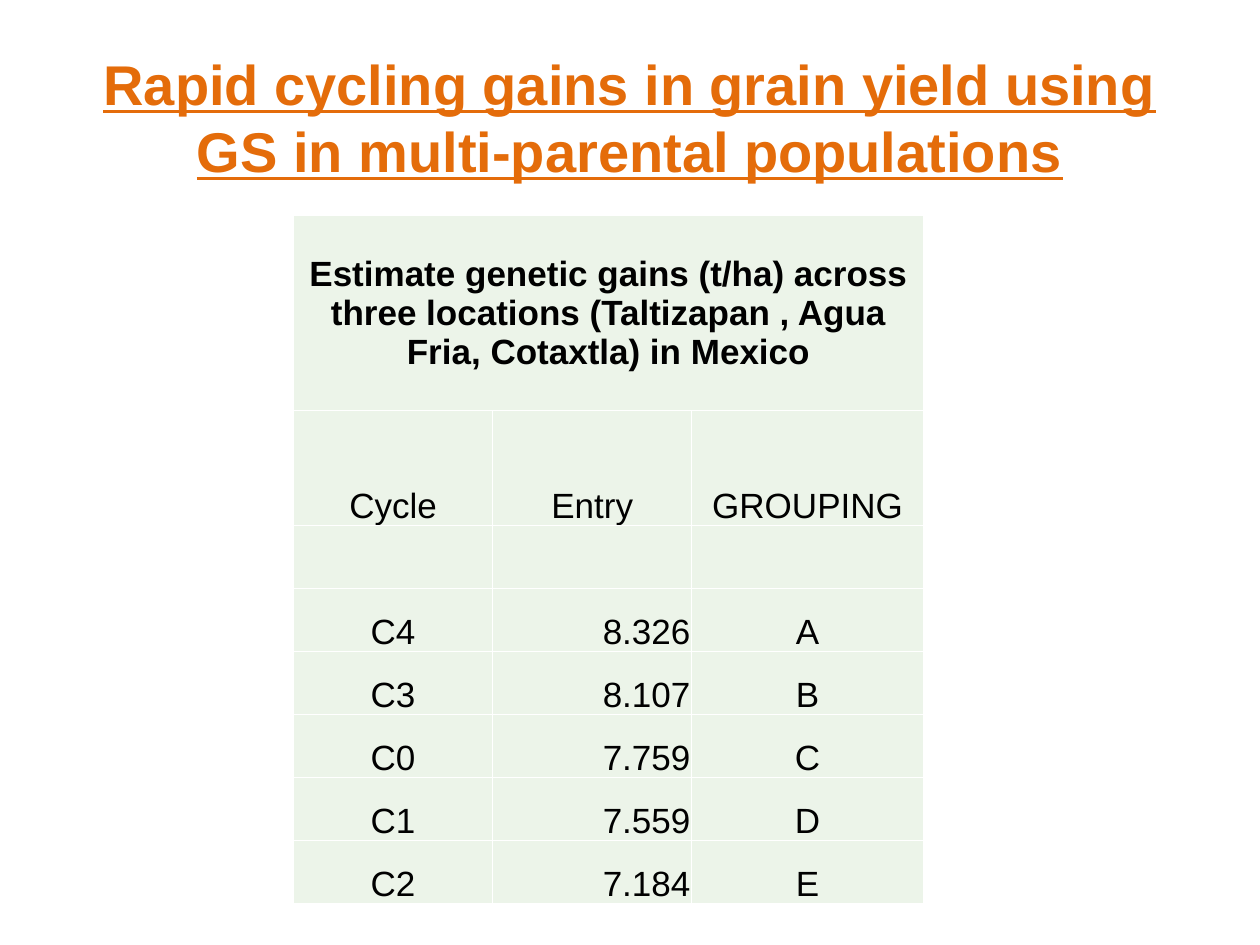
from lxml import etree
from pptx import Presentation
from pptx import util as u
from pptx.dml.color import RGBColor
from pptx.enum import text
from pptx.oxml.ns import qn

COLORS = {"title": "E46C0A", "ink": "000000", "cell": "ECF4E9", "border": "FFFFFF"}
FONT = "Arial"
TITLE = "Rapid cycling gains in grain yield using GS in multi-parental populations"
CAPTION = ("Estimate genetic gains (t/ha) across three locations "
           "(Taltizapan , Agua Fria, Cotaxtla) in Mexico")
HEADINGS = ("Cycle", "Entry", "GROUPING")
GAINS = [
    ("C4", "8.326", "A"),
    ("C3", "8.107", "B"),
    ("C0", "7.759", "C"),
    ("C1", "7.559", "D"),
    ("C2", "7.184", "E"),
]
COLUMN_WIDTHS = (1.58, 1.58, 1.84)
ROW_HEIGHTS = (1.55, 0.91) + (0.5,) * 6


def write_paragraph(paragraph, content, size, color, alignment, bold=False):
    """Fill a paragraph and set its font and alignment."""
    paragraph.text = content
    paragraph.alignment = alignment
    paragraph.font.name = FONT
    paragraph.font.size = u.Pt(size)
    paragraph.font.bold = bold
    paragraph.font.color.rgb = RGBColor.from_string(COLORS[color])


def add_title(slide):
    """Add the underlined slide title."""
    box = slide.shapes.add_textbox(u.Inches(0.5), u.Inches(0.3), u.Inches(9), u.Inches(1.25))
    frame = box.text_frame
    frame.word_wrap = True
    frame.vertical_anchor = text.MSO_ANCHOR.MIDDLE
    paragraph = frame.paragraphs[0]
    write_paragraph(paragraph, TITLE, 32, "title", text.PP_ALIGN.CENTER, bold=True)
    paragraph.font.underline = True


def set_borders(cell):
    """Draw a thin border on all four sides of a cell."""
    properties = cell._tc.get_or_add_tcPr()
    for position, side in enumerate(("lnL", "lnR", "lnT", "lnB")):
        line = etree.Element(qn(f"a:{side}"), w=str(u.Pt(1)))
        fill = etree.SubElement(line, qn("a:solidFill"))
        etree.SubElement(fill, qn("a:srgbClr"), val=COLORS["border"])
        properties.insert(position, line)


def style_cell(cell):
    """Set the fill, borders, margins and anchor of a cell."""
    cell.fill.solid()
    cell.fill.fore_color.rgb = RGBColor.from_string(COLORS["cell"])
    set_borders(cell)
    cell.margin_left = cell.margin_right = cell.margin_top = u.Inches(0.01)
    cell.margin_bottom = 0
    cell.vertical_anchor = text.MSO_ANCHOR.BOTTOM


def add_gains_table(slide):
    """Add the table of genetic gains with its merged caption row."""
    table = slide.shapes.add_table(
        len(ROW_HEIGHTS), len(COLUMN_WIDTHS), u.Inches(2.33), u.Inches(1.71),
        u.Inches(sum(COLUMN_WIDTHS)), u.Inches(sum(ROW_HEIGHTS))).table
    table.first_row = table.horz_banding = False
    for column, width in zip(table.columns, COLUMN_WIDTHS):
        column.width = u.Inches(width)
    for row, height in zip(table.rows, ROW_HEIGHTS):
        row.height = u.Inches(height)
    for cell in table.iter_cells():
        style_cell(cell)

    caption = table.cell(0, 0)
    caption.merge(table.cell(0, len(COLUMN_WIDTHS) - 1))
    caption.vertical_anchor = text.MSO_ANCHOR.MIDDLE
    write_paragraph(caption.text_frame.paragraphs[0], CAPTION, 20, "ink",
                    text.PP_ALIGN.CENTER, bold=True)

    filled_rows = [(1, HEADINGS), *enumerate(GAINS, start=3)]
    for row_index, values in filled_rows:
        for column_index, value in enumerate(values):
            is_gain = row_index > 1 and column_index == 1
            alignment = text.PP_ALIGN.RIGHT if is_gain else text.PP_ALIGN.CENTER
            paragraph = table.cell(row_index, column_index).text_frame.paragraphs[0]
            write_paragraph(paragraph, value, 20, "ink", alignment)


def main():
    """Build the slide and save it."""
    presentation = Presentation()
    presentation.slide_width = u.Inches(10)
    presentation.slide_height = u.Inches(7.5)
    slide = presentation.slides.add_slide(presentation.slide_layouts[6])
    add_title(slide)
    add_gains_table(slide)
    presentation.save("out.pptx")


if __name__ == "__main__":
    main()
